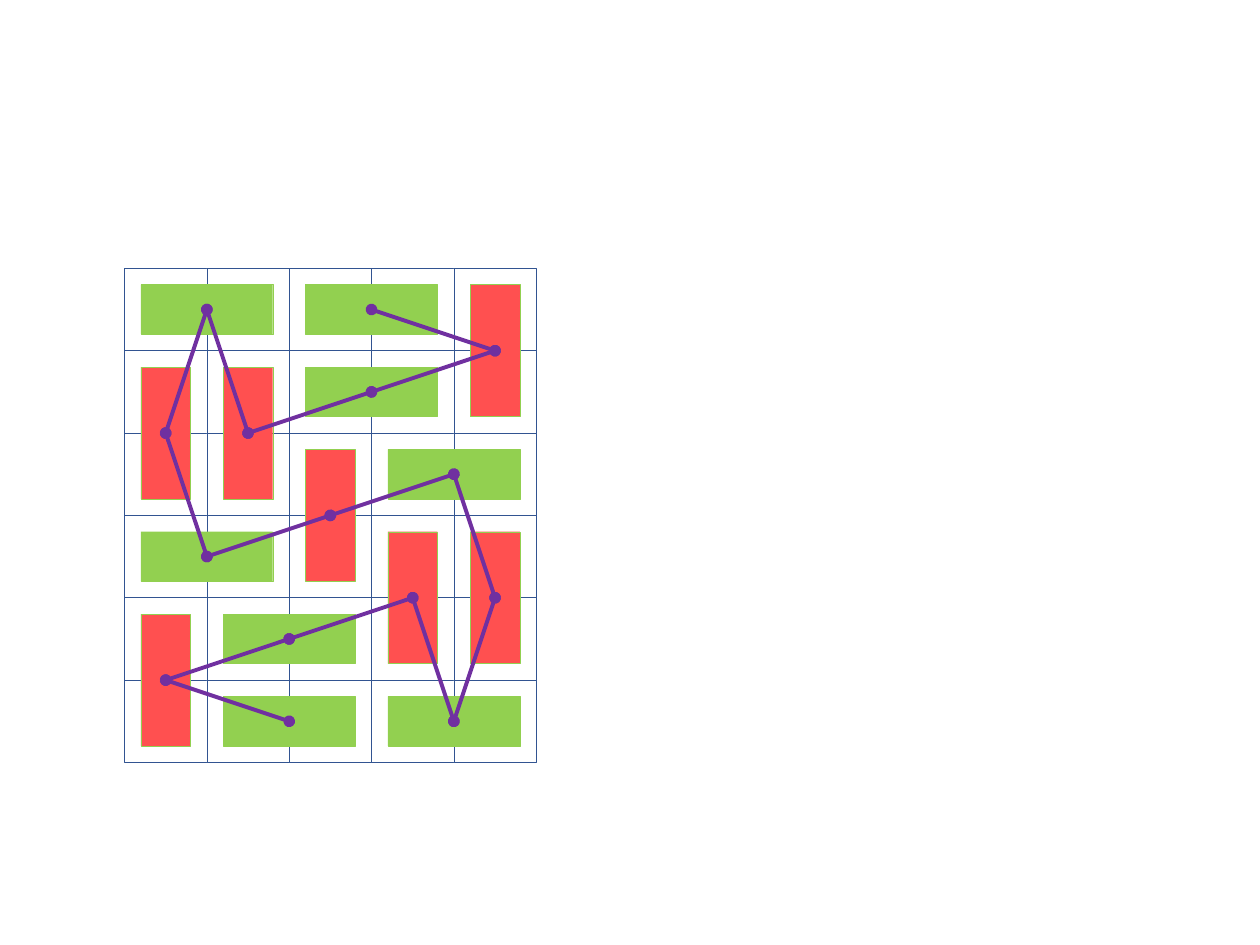
"""Draw a domino tiling of a 5 by 6 board and the path through its dominoes."""
from lxml import etree
from pptx import Presentation
from pptx.dml.color import RGBColor
from pptx.enum.shapes import MSO_CONNECTOR, MSO_SHAPE
from pptx.oxml.ns import qn
from pptx.util import Cm, Pt

RECTANGLE = MSO_SHAPE.RECTANGLE
STRAIGHT = MSO_CONNECTOR.STRAIGHT

COLORS = {
    "cell": "FFFFFF",
    "grid": "325491",
    "flat": "92D050",
    "upright": "FF5050",
    "path": "7030A0",
}
COLUMNS, ROWS = 5, 6
CELL = 1.66
LEFT, TOP = 2.51, 5.41
SHORT, LONG = 1.0, 2.66

DOMINOES = [
    (3, 0.5, "flat"), (4.5, 1, "upright"), (3, 1.5, "flat"),
    (1.5, 2, "upright"), (1, 0.5, "flat"), (0.5, 2, "upright"),
    (1, 3.5, "flat"), (2.5, 3, "upright"), (4, 2.5, "flat"),
    (4.5, 4, "upright"), (4, 5.5, "flat"), (3.5, 4, "upright"),
    (2, 4.5, "flat"), (0.5, 5, "upright"), (2, 5.5, "flat"),
]

prs = Presentation()
prs.slide_width, prs.slide_height = Cm(25.4), Cm(19.05)
slide = prs.slides.add_slide(prs.slide_layouts[6])


def add_box(x, y, width, height, fill, outline):
    box = slide.shapes.add_shape(
        RECTANGLE, Cm(x - width / 2), Cm(y - height / 2), Cm(width), Cm(height))
    box.shadow.inherit = False
    box.fill.solid()
    box.fill.fore_color.rgb = RGBColor.from_string(COLORS[fill])
    box.line.color.rgb = RGBColor.from_string(COLORS[outline])
    box.line.width = Pt(0.25)


def add_step(start, end):
    step = slide.shapes.add_connector(STRAIGHT, *(Cm(v) for v in start + end))
    step.line.color.rgb = RGBColor.from_string(COLORS["path"])
    step.line.width = Pt(2.25)
    for tag in ("a:headEnd", "a:tailEnd"):
        etree.SubElement(step.line._get_or_add_ln(), qn(tag), type="oval")
    etree.SubElement(step._element.spPr, qn("a:effectLst"))


for row in range(ROWS):
    for column in range(COLUMNS):
        add_box(LEFT + (column + 0.5) * CELL, TOP + (row + 0.5) * CELL,
                CELL, CELL, "cell", "grid")

previous = None
for column, row, direction in DOMINOES:
    center = (LEFT + column * CELL, TOP + row * CELL)
    size = (LONG, SHORT) if direction == "flat" else (SHORT, LONG)
    add_box(*center, *size, direction, "flat")
    if previous:
        add_step(previous, center)
    previous = center

prs.save("out.pptx")
